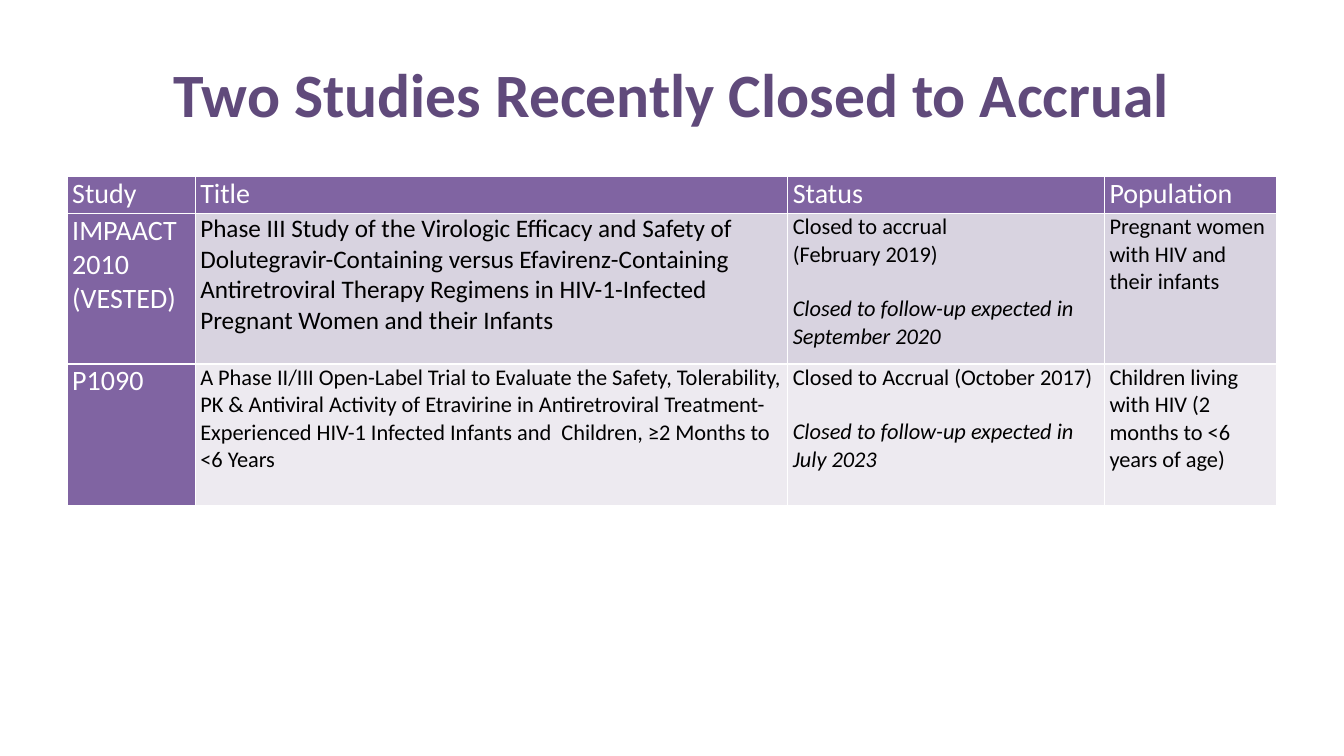
import pptx
import pptx.dml.color
import pptx.enum.text
import pptx.oxml
import pptx.oxml.ns
import pptx.util

Pt = pptx.util.Pt
PP_ALIGN = pptx.enum.text.PP_ALIGN
MSO_ANCHOR = pptx.enum.text.MSO_ANCHOR

FONT = "Calibri"
PURPLE = "8064A2"
WHITE = "FFFFFF"
BLACK = "000000"
ROW_FILLS = [PURPLE, "D8D3E0", "EDEAF0"]
COL_WIDTHS = [91.5, 423.25, 226.25, 123]
ROW_HEIGHTS = [26.5, 107.5, 101]
BLANK_LINE = 19.5

HEADERS = ["Study", "Title", "Status", "Population"]
STUDIES = [
    {
        "name": "IMPAACT 2010 (VESTED)",
        "title": "Phase III Study of the Virologic Efficacy and Safety of "
                 "Dolutegravir-Containing versus Efavirenz-Containing "
                 "Antiretroviral Therapy Regimens in HIV-1-Infected "
                 "Pregnant Women and their Infants",
        "title_size": 18,
        "status": "Closed to accrual \v(February 2019)",
        "follow_up": "Closed to follow-up expected in September 2020",
        "population": "Pregnant women with HIV and their infants",
    },
    {
        "name": "P1090",
        "title": "A Phase II/III Open-Label Trial to Evaluate the Safety, "
                 "Tolerability, PK & Antiviral Activity of Etravirine in "
                 "Antiretroviral Treatment-Experienced HIV-1 Infected "
                 "Infants and  Children, ≥2 Months to <6 Years",
        "title_size": 16,
        "status": "Closed to Accrual (October 2017)",
        "follow_up": "Closed to follow-up expected in \vJuly 2023",
        "population": "Children living with HIV (2 months to <6 years of age)",
    },
]


def rgb(color):
    return pptx.dml.color.RGBColor.from_string(color)


def write(p, text, size=16, color=BLACK, bold=False, italic=False,
          align=PP_ALIGN.LEFT, before=0):
    p.text = text
    p.alignment = align
    p.space_before = Pt(before)
    for r in p.runs:
        r.font.name = FONT
        r.font.size = Pt(size)
        r.font.bold = bold
        r.font.italic = italic
        r.font.color.rgb = rgb(color)


def set_borders(cell, color, width):
    tc_pr = cell._tc.get_or_add_tcPr()
    for i, side in enumerate(("lnL", "lnR", "lnT", "lnB")):
        line = pptx.oxml.parse_xml(
            f'<a:{side} {pptx.oxml.ns.nsdecls("a")} w="{Pt(width)}">'
            f'<a:solidFill><a:srgbClr val="{color}"/></a:solidFill></a:{side}>')
        tc_pr.insert(i, line)


def fill_cell(cell, text, fill, **fmt):
    cell.margin_left = cell.margin_right = Pt(3.6)
    cell.margin_top = cell.margin_bottom = Pt(0)
    cell.vertical_anchor = MSO_ANCHOR.TOP
    cell.fill.solid()
    cell.fill.fore_color.rgb = rgb(fill)
    set_borders(cell, WHITE, 1)
    write(cell.text_frame.paragraphs[0], text, **fmt)


def add_title(slide, text):
    sp = slide.shapes.title
    sp.left, sp.top, sp.width, sp.height = Pt(48), Pt(21.6), Pt(864), Pt(90)
    tf = sp.text_frame
    tf.word_wrap = True
    tf.vertical_anchor = MSO_ANCHOR.MIDDLE
    write(tf.paragraphs[0], text, size=44, color="604A7B", bold=True,
          align=PP_ALIGN.CENTER)


def add_study_table(slide):
    table = slide.shapes.add_table(
        len(ROW_HEIGHTS), len(COL_WIDTHS), Pt(48), Pt(126),
        Pt(sum(COL_WIDTHS)), Pt(sum(ROW_HEIGHTS))).table
    for col, width in zip(table.columns, COL_WIDTHS):
        col.width = Pt(width)
    for row, height in zip(table.rows, ROW_HEIGHTS):
        row.height = Pt(height)
    for c, header in enumerate(HEADERS):
        fill_cell(table.cell(0, c), header, ROW_FILLS[0], size=20, color=WHITE)
    for i, study in enumerate(STUDIES, start=1):
        name, title, status, population = table.rows[i].cells
        fill = ROW_FILLS[i]
        fill_cell(name, study["name"], PURPLE, size=20, color=WHITE)
        fill_cell(title, study["title"], fill, size=study["title_size"])
        fill_cell(status, study["status"], fill)
        write(status.text_frame.add_paragraph(), study["follow_up"],
              italic=True, before=BLANK_LINE)
        fill_cell(population, study["population"], fill)


def main():
    prs = pptx.Presentation()
    prs.slide_width, prs.slide_height = Pt(960), Pt(540)
    slide = prs.slides.add_slide(prs.slide_layouts[5])
    add_title(slide, "Two Studies Recently Closed to Accrual")
    add_study_table(slide)
    prs.save("out.pptx")


if __name__ == "__main__":
    main()
